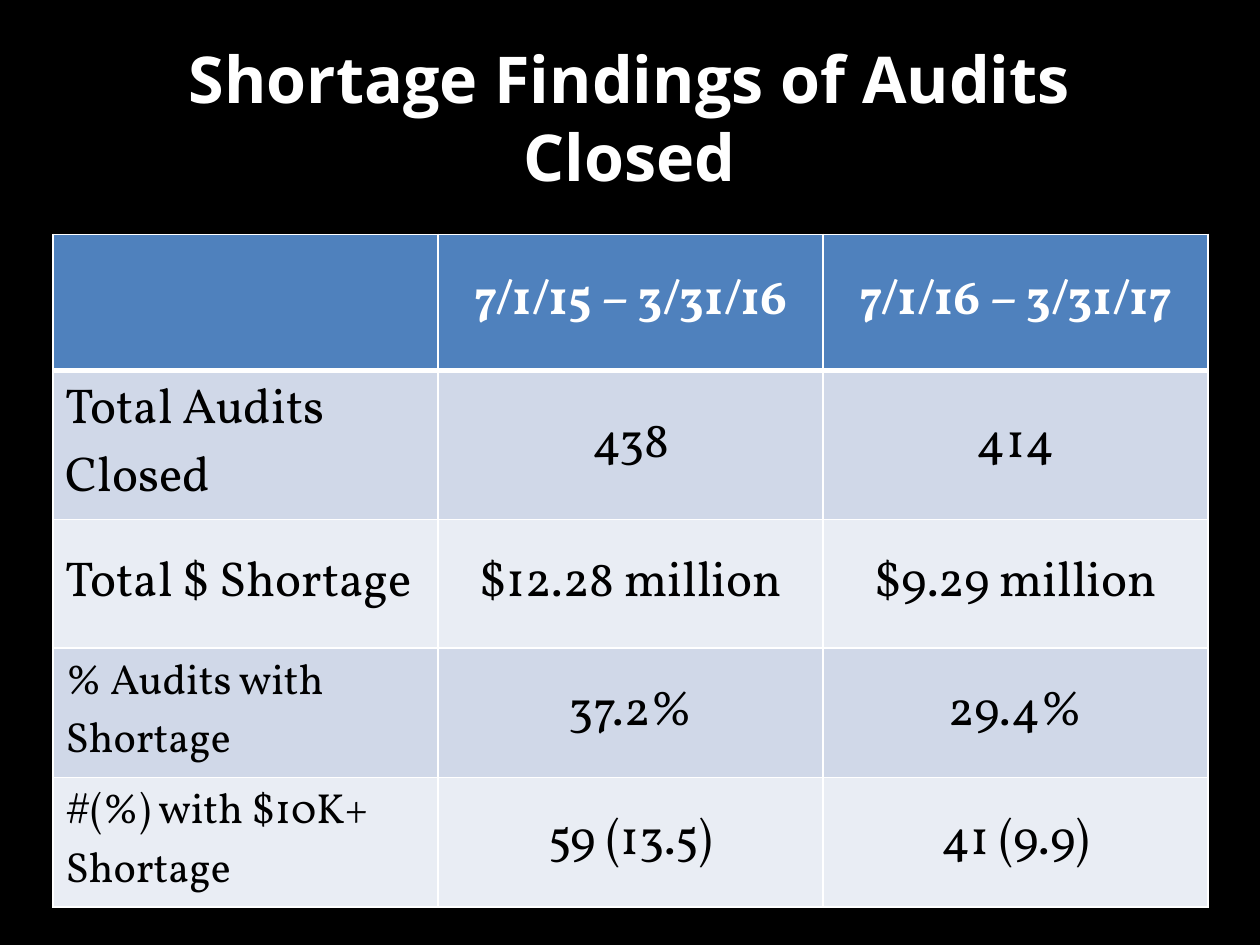
from dataclasses import dataclass

from lxml import etree
from pptx import Presentation, util as u
from pptx.dml.color import RGBColor
from pptx.enum import text
from pptx.oxml import ns


@dataclass(frozen=True)
class Theme:
    background: str = "000000"
    light: str = "FFFFFF"
    dark: str = "000000"
    header: str = "4F81BD"
    bands: tuple[str, str] = ("D0D8E8", "E9EDF4")
    title_font: str = "Open Sans"
    table_font: str = "Vollkorn"
    title_size: float = 36.9
    table_size: float = 28
    small_size: float = 24
    thin_line: float = 1
    thick_line: float = 3


@dataclass(frozen=True)
class Row:
    label: str
    values: tuple[str, str]
    height: float
    label_size: float


THEME = Theme()
COLUMN_WIDTH = 9.17 / 3
ROWS = (
    Row("", ("7/1/15 – 3/31/16", "7/1/16 – 3/31/17"), 1.08, THEME.table_size),
    Row("Total Audits Closed", ("438", "414"), 1.08, THEME.table_size),
    Row("Total $ Shortage", ("$12.28 million", "$9.29 million"), 1.02, THEME.table_size),
    Row("% Audits with Shortage", ("37.2%", "29.4%"), 1.02, THEME.small_size),
    Row("#(%) with $10K+ Shortage", ("59 (13.5)", "41 (9.9)"), 1.02, THEME.small_size),
)


def write_text(frame, content: str, *, font: str, size: float, color: str,
               bold: bool = False, align=text.PP_ALIGN.CENTER) -> None:
    frame.word_wrap = True
    paragraph = frame.paragraphs[0]
    paragraph.alignment = align
    paragraph.font.size = u.Pt(size)
    if not content:
        return
    run = paragraph.add_run()
    run.text = content
    run.font.name = font
    run.font.size = u.Pt(size)
    run.font.bold = bold
    run.font.color.rgb = RGBColor.from_string(color)


def set_borders(cell, top: float, bottom: float) -> None:
    """Draw all four cell borders; must run before the cell is filled."""
    properties = cell._tc.get_or_add_tcPr()
    widths = {"lnL": THEME.thin_line, "lnR": THEME.thin_line, "lnT": top, "lnB": bottom}
    for side, width in widths.items():
        line = etree.SubElement(properties, ns.qn(f"a:{side}"), w=str(u.Pt(width)))
        fill = etree.SubElement(line, ns.qn("a:solidFill"))
        etree.SubElement(fill, ns.qn("a:srgbClr"), val=THEME.light)


def add_title(slide, content: str) -> None:
    title = slide.shapes.title
    title.left, title.top = u.Inches(0.5), u.Inches(0.3)
    title.width, title.height = u.Inches(9), u.Inches(1.25)
    title.text_frame.vertical_anchor = text.MSO_ANCHOR.MIDDLE
    write_text(title.text_frame, content, font=THEME.title_font,
               size=THEME.title_size, color=THEME.light, bold=True)


def fill_row(table, index: int, row: Row) -> None:
    is_header = index == 0
    table.rows[index].height = u.Inches(row.height)
    background = THEME.header if is_header else THEME.bands[(index - 1) % 2]
    top = THEME.thick_line if index == 1 else THEME.thin_line
    bottom = THEME.thick_line if is_header else THEME.thin_line
    for column, content in enumerate((row.label, *row.values)):
        cell = table.cell(index, column)
        is_label = column == 0
        set_borders(cell, top, bottom)
        cell.fill.solid()
        cell.fill.fore_color.rgb = RGBColor.from_string(background)
        cell.vertical_anchor = text.MSO_ANCHOR.MIDDLE
        write_text(cell.text_frame, content, font=THEME.table_font,
                   size=row.label_size if is_label else THEME.table_size,
                   color=THEME.light if is_header else THEME.dark, bold=is_header,
                   align=text.PP_ALIGN.LEFT if is_label else text.PP_ALIGN.CENTER)


def add_findings_table(slide) -> None:
    column_count = 1 + len(ROWS[0].values)
    table = slide.shapes.add_table(
        len(ROWS), column_count, u.Inches(0.42), u.Inches(1.86),
        u.Inches(COLUMN_WIDTH * column_count),
        u.Inches(sum(row.height for row in ROWS))).table
    for column in table.columns:
        column.width = u.Inches(COLUMN_WIDTH)
    for index, row in enumerate(ROWS):
        fill_row(table, index, row)


def main() -> None:
    presentation = Presentation()
    presentation.slide_width, presentation.slide_height = u.Inches(10), u.Inches(7.5)
    slide = presentation.slides.add_slide(presentation.slide_layouts.get_by_name("Title Only"))
    slide.background.fill.solid()
    slide.background.fill.fore_color.rgb = RGBColor.from_string(THEME.background)
    add_title(slide, "Shortage Findings of Audits Closed")
    add_findings_table(slide)
    presentation.save("out.pptx")


if __name__ == "__main__":
    main()
